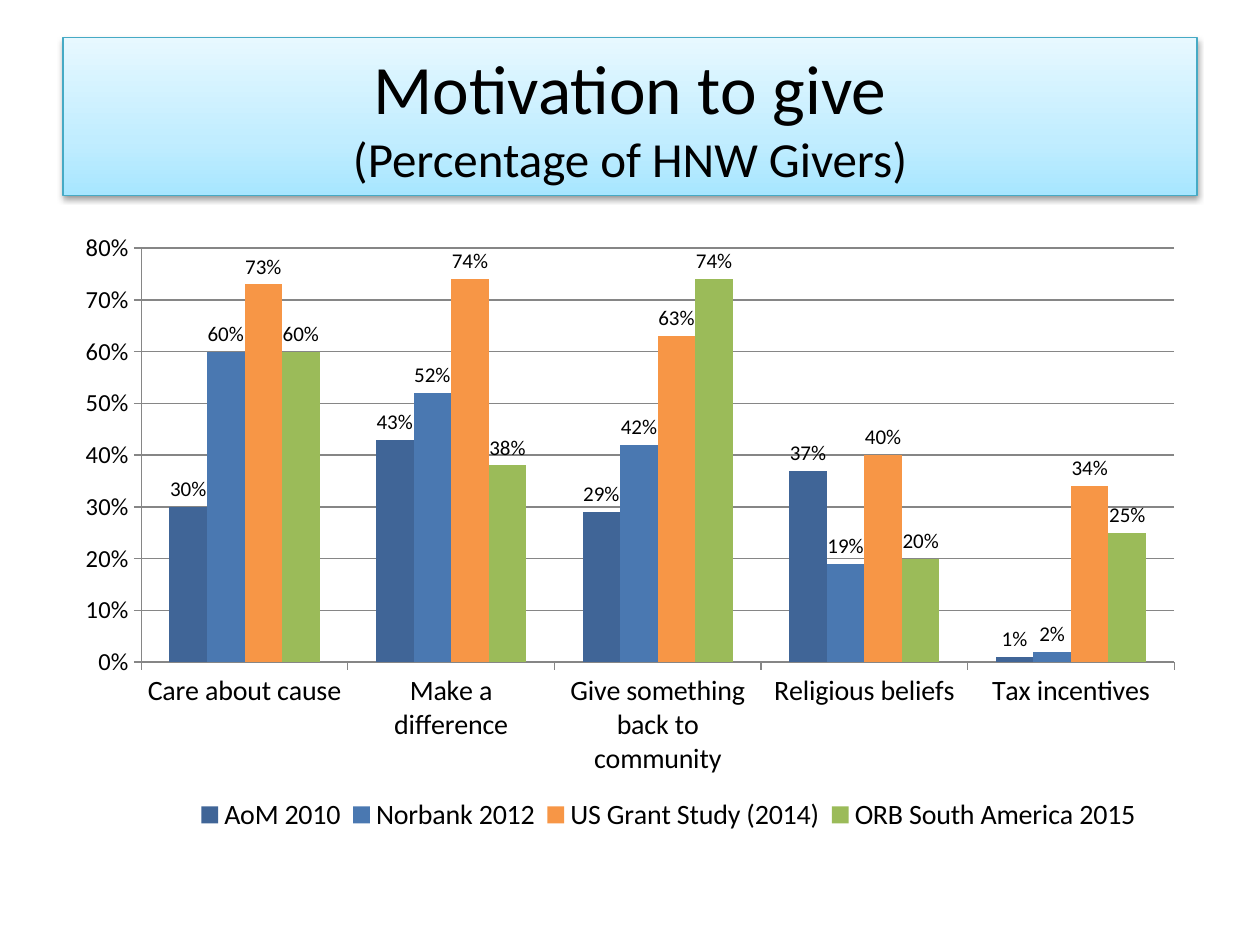
import copy

import pptx
import pptx.chart.data
import pptx.dml.color
import pptx.enum.chart
import pptx.enum.text
import pptx.oxml
import pptx.oxml.ns
import pptx.util

Cm = pptx.util.Cm
Pt = pptx.util.Pt
FONT = "Calibri"
COLORS = {
    "text": "000000", "edge": "46AAC5", "grid": "868686",
    "low": "A7E6FF", "mid": "C1EDFF", "high": "E7F8FF",
    "navy": "406597", "blue": "4A78B1", "orange": "F79646", "green": "9BBB59",
}


def rgb(name):
    return pptx.dml.color.RGBColor.from_string(COLORS[name])


def style(font, size):
    font.name = FONT
    font.size = Pt(size)
    font.color.rgb = rgb("text")


deck = pptx.Presentation()
deck.slide_width, deck.slide_height = Cm(25.4), Cm(19.05)
slide = deck.slides.add_slide(deck.slide_layouts[5])

# Title banner
title = slide.shapes.title
title.left, title.top = Cm(1.27), Cm(0.76)
title.width, title.height = Cm(22.86), Cm(3.18)
frame = title.text_frame
frame.text = "Motivation to give\v(Percentage of HNW Givers)"
frame.vertical_anchor = pptx.enum.text.MSO_ANCHOR.MIDDLE
para = frame.paragraphs[0]
para.alignment = pptx.enum.text.PP_ALIGN.CENTER
for run, size in zip(para.runs, (39.6, 28)):
    style(run.font, size)

title.fill.gradient()
title.fill.gradient_angle = 90
stops = title.element.spPr.find(".//" + pptx.oxml.ns.qn("a:gsLst"))
stops.insert(1, copy.deepcopy(stops[0]))
for stop, (place, name) in zip(title.fill.gradient_stops,
                               ((0, "low"), (0.35, "mid"), (1, "high"))):
    stop.position = place
    stop.color.rgb = rgb(name)
title.line.color.rgb = rgb("edge")
title.line.width = Pt(0.75)

title.shadow.inherit = False
effects = title.element.spPr.find(pptx.oxml.ns.qn("a:effectLst"))
effects.append(pptx.oxml.parse_xml(
    f'<a:outerShdw {pptx.oxml.ns.nsdecls("a")} blurRad="{Pt(3.1)}" '
    f'dist="{Pt(1.6)}" dir="5400000" rotWithShape="0">'
    '<a:srgbClr val="000000"><a:alpha val="38000"/></a:srgbClr></a:outerShdw>'))

# Chart of motives by study
data = pptx.chart.data.CategoryChartData(number_format="0%")
data.categories = ["Care about cause", "Make a difference",
                   "Give something back to community",
                   "Religious beliefs", "Tax incentives"]
studies = [
    ("AoM 2010", "navy", (0.3, 0.43, 0.29, 0.37, 0.01)),
    ("Norbank 2012", "blue", (0.6, 0.52, 0.42, 0.19, 0.02)),
    ("US Grant Study (2014)", "orange", (0.73, 0.74, 0.63, 0.4, 0.34)),
    ("ORB South America 2015", "green", (0.6, 0.38, 0.74, 0.2, 0.25)),
]
for name, color, shares in studies:
    data.add_series(name, shares)

chart = slide.shapes.add_chart(
    pptx.enum.chart.XL_CHART_TYPE.COLUMN_CLUSTERED,
    Cm(1.27), Cm(4.45), Cm(22.86), Cm(12.57), data).chart
style(chart.font, 18)
chart.has_title = False
chart.has_legend = True
chart.legend.position = pptx.enum.chart.XL_LEGEND_POSITION.BOTTOM
chart.legend.include_in_layout = False
style(chart.legend.font, 16)

plot = chart.plots[0]
plot.gap_width = 150
plot.overlap = 0
plot.vary_by_categories = False
for series, (name, color, shares) in zip(plot.series, studies):
    series.format.fill.solid()
    series.format.fill.fore_color.rgb = rgb(color)
    series.invert_if_negative = False
    labels = series.data_labels
    labels.show_value = True
    labels.number_format = "0%"
    labels.number_format_is_linked = False
    labels.position = pptx.enum.chart.XL_LABEL_POSITION.OUTSIDE_END
    style(labels.font, 12)

for axis, size in ((chart.category_axis, 16), (chart.value_axis, 14)):
    style(axis.tick_labels.font, size)
    axis.major_tick_mark = pptx.enum.chart.XL_TICK_MARK.OUTSIDE
    axis.minor_tick_mark = pptx.enum.chart.XL_TICK_MARK.NONE
    axis.format.line.color.rgb = rgb("grid")
    axis.format.line.width = Pt(0.75)

scale = chart.value_axis
scale.minimum_scale, scale.maximum_scale, scale.major_unit = 0, 0.8, 0.1
scale.tick_labels.number_format = "0%"
scale.tick_labels.number_format_is_linked = False
scale.has_major_gridlines = True
scale.major_gridlines.format.line.color.rgb = rgb("grid")
scale.major_gridlines.format.line.width = Pt(0.75)

# Plot area and one-row legend, in percent of the chart: x, y, w, h
space = chart.element
for part, inner, box in (("plotArea", '<c:layoutTarget val="inner"/>', (6.9, 4.4, 91.1, 66.4)),
                         ("legend", "", (11.1, 92.2, 84.6, 6.2))):
    node = space.find(".//" + pptx.oxml.ns.qn("c:" + part))
    for old in node.findall(pptx.oxml.ns.qn("c:layout")):
        node.remove(old)
    sides = "".join(f'<c:{key} val="{value / 100:.3f}"/>'
                    for key, value in zip("xywh", box))
    layout = pptx.oxml.parse_xml(
        f'<c:layout {pptx.oxml.ns.nsdecls("c")}><c:manualLayout>{inner}'
        f'<c:xMode val="edge"/><c:yMode val="edge"/>{sides}</c:manualLayout></c:layout>')
    node.insert(1 if part == "legend" else 0, layout)

deck.save("out.pptx")
